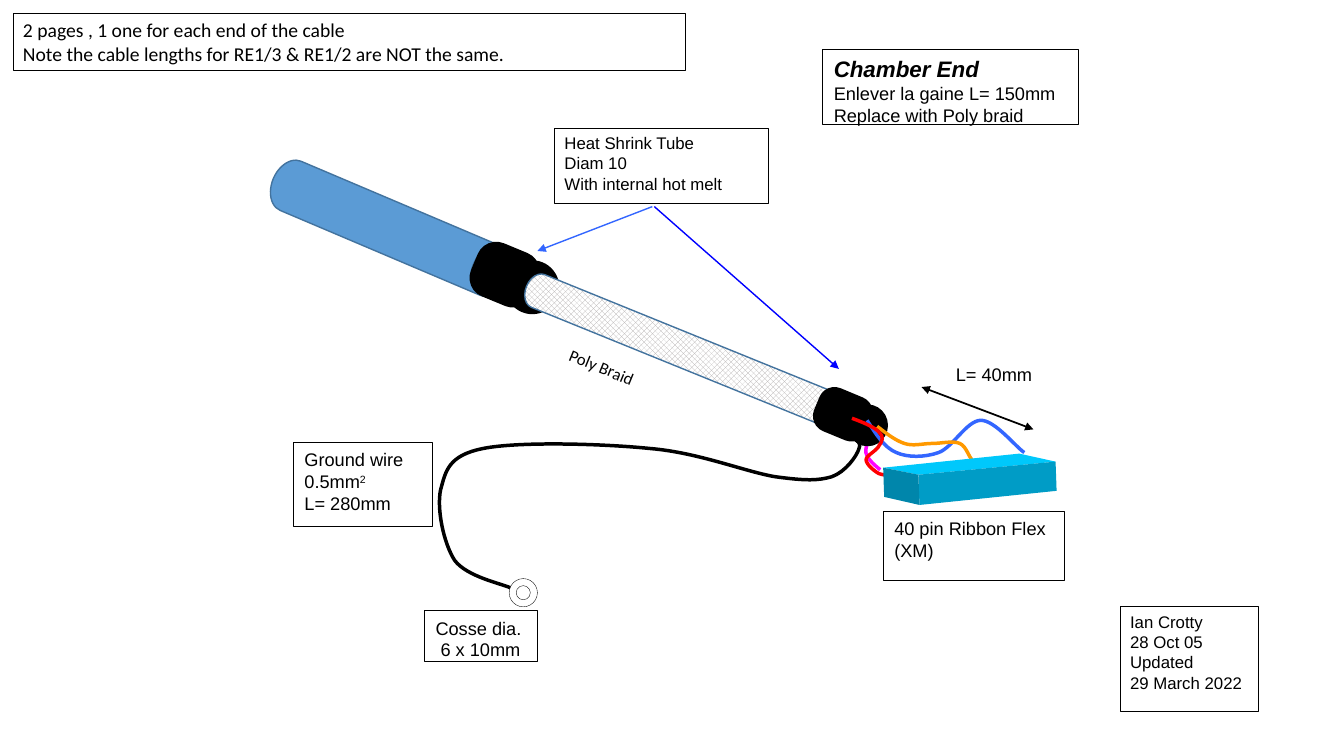
from dataclasses import dataclass

from lxml.etree import SubElement
from pptx import Presentation
from pptx.dml.color import RGBColor
from pptx.enum.dml import MSO_PATTERN_TYPE as Pattern
from pptx.enum.shapes import MSO_CONNECTOR as Connector, MSO_SHAPE as Preset
from pptx.enum.text import MSO_ANCHOR as Anchor, MSO_AUTO_SIZE as AutoSize, PP_ALIGN as Align
from pptx.oxml.ns import qn
from pptx.util import Inches, Pt

Point = tuple[float, float]
Area = tuple[float, float, float, float]


@dataclass(frozen=True)
class Theme:
    black: str = "000000"
    white: str = "FFFFFF"
    jacket: str = "5B9BD5"
    jacket_edge: str = "43739E"
    braid: str = "AFABAB"
    blue: str = "3366FF"
    deep_blue: str = "0000FF"
    magenta: str = "FF00FF"
    orange: str = "FF9900"
    red: str = "FF0000"
    plug_top: str = "00C8FB"
    plug_front: str = "009CC6"
    plug_side: str = "0086AB"
    title: float = 16
    note: float = 14
    label: float = 13
    small: float = 12
    sans: str = "Arial"
    body: str = "Calibri"


THEME = Theme()
TIGHT = (0.1, 0.05)


@dataclass(frozen=True)
class Span:
    text: str
    size: float = THEME.label
    font: str = THEME.sans
    strong: bool = False
    raised: bool = False


@dataclass(frozen=True)
class Label:
    area: Area
    paras: list[list[Span]]
    inset: Point = (0.11, 0.06)
    framed: bool = True
    filled: bool = False
    grows: bool = False
    turn: float = 0


@dataclass(frozen=True)
class Tube:
    preset: Preset
    area: Area
    fill: str
    turn: float = 0
    bend: float | None = None
    edge: str | None = None
    edge_width: float = 1
    braided: bool = False


@dataclass(frozen=True)
class Wire:
    color: str
    points: list[Point]


@dataclass(frozen=True)
class Arrow:
    start: Point
    end: Point
    color: str
    width: float = 1
    double: bool = False


@dataclass(frozen=True)
class Face:
    color: str
    corners: list[Point]


def rgb(color: str) -> RGBColor:
    return RGBColor.from_string(color)


def lines(size: float, font: str, *texts: str) -> list[list[Span]]:
    return [[Span(text, size, font)] for text in texts]


def set_fill(shape, color: str) -> None:
    shape.fill.solid()
    shape.fill.fore_color.rgb = rgb(color)


def set_line(shape, color: str, width: float) -> None:
    shape.line.color.rgb = rgb(color)
    shape.line.width = Pt(width)


def add_plain_shape(page, preset: Preset, area: Area):
    shape = page.shapes.add_shape(preset, *map(Inches, area))
    shape.shadow.inherit = False
    shape.fill.background()
    shape.line.fill.background()
    return shape


def draw_label(page, label: Label) -> None:
    if label.framed:
        box = add_plain_shape(page, Preset.RECTANGLE, label.area)
        set_line(box, THEME.black, 0.75)
    else:
        box = page.shapes.add_textbox(*map(Inches, label.area))
    if label.filled:
        set_fill(box, THEME.white)
    box.rotation = label.turn
    frame = box.text_frame
    frame.word_wrap = True
    frame.vertical_anchor = Anchor.TOP
    frame.auto_size = AutoSize.SHAPE_TO_FIT_TEXT if label.grows else AutoSize.NONE
    frame.margin_left = frame.margin_right = Inches(label.inset[0])
    frame.margin_top = frame.margin_bottom = Inches(label.inset[1])
    for index, spans in enumerate(label.paras):
        para = frame.add_paragraph() if index else frame.paragraphs[0]
        para.alignment = Align.LEFT
        for span in spans:
            run = para.add_run()
            run.text = span.text
            run.font.name = span.font
            run.font.size = Pt(span.size)
            run.font.bold = run.font.italic = span.strong
            run.font.color.rgb = rgb(THEME.black)
            if span.raised:
                run.font._element.set("baseline", "30000")


def draw_tube(page, tube: Tube) -> None:
    shape = add_plain_shape(page, tube.preset, tube.area)
    shape.rotation = tube.turn
    if tube.bend is not None:
        shape.adjustments[0] = tube.bend
    if tube.braided:
        shape.fill.patterned()
        shape.fill.pattern = Pattern.OUTLINED_DIAMOND
        shape.fill.fore_color.rgb = rgb(tube.fill)
        shape.fill.back_color.rgb = rgb(THEME.white)
    else:
        set_fill(shape, tube.fill)
    if tube.edge:
        set_line(shape, tube.edge, tube.edge_width)


def draw_outline(page, points: list[Point], close: bool):
    start, *rest = [(Inches(x), Inches(y)) for x, y in points]
    builder = page.shapes.build_freeform(*start)
    builder.add_line_segments(rest, close=close)
    shape = builder.convert_to_shape()
    shape.shadow.inherit = False
    return shape


def draw_wire(page, wire: Wire) -> None:
    shape = draw_outline(page, wire.points, False)
    route = shape._element.spPr.find(f".//{qn('a:path')}")
    for index, segment in enumerate(route.findall(qn("a:lnTo"))):
        if index % 3 == 0:
            bezier = SubElement(route, qn("a:cubicBezTo"))
        bezier.append(segment[0])
        route.remove(segment)
    shape.fill.background()
    set_line(shape, wire.color, 2.5)


def draw_face(page, face: Face) -> None:
    shape = draw_outline(page, face.corners, True)
    set_fill(shape, face.color)
    shape.line.fill.background()


def draw_arrow(page, arrow: Arrow) -> None:
    line = page.shapes.add_connector(Connector.STRAIGHT, *map(Inches, arrow.start + arrow.end))
    set_line(line, arrow.color, arrow.width)
    for end in ("headEnd", "tailEnd") if arrow.double else ("tailEnd",):
        SubElement(line.line._get_or_add_ln(), qn(f"a:{end}"), type="triangle")
    SubElement(line._element.spPr, qn("a:effectLst"))


def sleeve(body: Area, mouth: Area) -> list[Tube]:
    return [Tube(Preset.ROUNDED_RECTANGLE, body, THEME.black, 22.5, 0.35),
            Tube(Preset.OVAL, mouth, THEME.black, edge=THEME.black, edge_width=2.5)]


LUG = Tube(Preset.DONUT, (5.05, 5.74, 0.28, 0.28), THEME.white, 0, 0.25, THEME.black, 0.25)
JACKET = Tube(Preset.CAN, (3.61, 1, 0.53, 2.53), THEME.jacket, 113, 0.7, THEME.jacket_edge)
BRAID = Tube(Preset.CAN, (6.77, 1.68, 0.35, 3.72), THEME.braid, 112.1, 0.7, THEME.jacket_edge,
             braided=True)
CABLE = [LUG, JACKET, *sleeve((4.68, 2.44, 0.65, 0.57), (5.03, 2.6, 0.5, 0.5)), BRAID]
COLLAR = sleeve((8.08, 3.88, 0.56, 0.46), (8.42, 4.03, 0.37, 0.38))
INNER_WIRES = [
    Wire(THEME.magenta, [(8.32, 4.11), (8.43, 4.16), (8.55, 4.2), (8.6, 4.25), (8.64, 4.29),
                         (8.6, 4.34), (8.6, 4.39), (8.6, 4.43), (8.57, 4.48), (8.6, 4.52),
                         (8.62, 4.57), (8.68, 4.62), (8.73, 4.66)]),
    Wire(THEME.black, [(8.39, 4.31), (8.47, 4.34), (8.55, 4.38), (8.52, 4.45), (8.5, 4.52),
                       (8.39, 4.68), (8.25, 4.73), (8.11, 4.77), (7.99, 4.77), (7.69, 4.73),
                       (7.39, 4.68), (6.93, 4.49), (6.45, 4.45), (5.96, 4.4), (5.13, 4.38),
                       (4.79, 4.45), (4.44, 4.52), (4.42, 4.68), (4.37, 4.86), (4.33, 5.05),
                       (4.4, 5.39), (4.51, 5.56), (4.63, 5.72), (4.97, 5.79), (5.06, 5.83)]),
]
OUTER_WIRES = [
    Wire(THEME.blue, [(8.6, 4.17), (8.69, 4.31), (8.77, 4.44), (8.89, 4.49), (9, 4.54),
                      (9.17, 4.54), (9.31, 4.49), (9.45, 4.44), (9.59, 4.17), (9.73, 4.17),
                      (9.87, 4.17), (10.08, 4.44), (10.16, 4.49)]),
    Wire(THEME.orange, [(8.7, 4.23), (8.79, 4.3), (8.88, 4.37), (8.97, 4.4), (9.06, 4.43),
                        (9.15, 4.4), (9.25, 4.4), (9.34, 4.4), (9.45, 4.37), (9.52, 4.4),
                        (9.59, 4.43), (9.61, 4.55), (9.66, 4.58), (9.7, 4.6), (9.75, 4.59),
                        (9.8, 4.58)]),
    Wire(THEME.red, [(8.45, 4.15), (8.56, 4.19), (8.68, 4.24), (8.72, 4.29), (8.77, 4.33),
                     (8.75, 4.38), (8.72, 4.42), (8.7, 4.47), (8.59, 4.52), (8.59, 4.56),
                     (8.59, 4.61), (8.68, 4.68), (8.72, 4.7), (8.77, 4.72), (8.82, 4.71),
                     (8.86, 4.7)]),
]
BACK, EDGE, RIGHT, NEAR = (8.76, 4.64), (9.11, 4.71), (10.47, 4.58), (9.12, 5.01)
PLUG = [
    Face(THEME.plug_top, [BACK, (10.11, 4.5), RIGHT, EDGE]),
    Face(THEME.plug_front, [EDGE, RIGHT, (10.48, 4.87), NEAR]),
    Face(THEME.plug_side, [BACK, EDGE, NEAR, (8.77, 4.93)]),
]
ARROWS = [
    Arrow((6.47, 2.05), (5.33, 2.49), THEME.blue),
    Arrow((6.49, 2.05), (8.32, 3.66), THEME.deep_blue),
    Arrow((9.14, 3.84), (10.25, 4.26), THEME.black, 1.25, True),
]
LABELS = [
    Label((11.11, 6.02, 1.37, 1.04), lines(THEME.small, THEME.sans, "Ian Crotty", "28 Oct 05",
                                           "Updated", "29 March 2022"), TIGHT),
    Label((4.21, 6.06, 1.12, 0.5), lines(THEME.label, THEME.sans, "Cosse dia.", " 6 x 10mm")),
    Label((8.16, 0.49, 2.54, 0.75), [[Span("Chamber End", THEME.title, strong=True)],
                                     [Span("Enlever la gaine L= 150mm")],
                                     [Span("Replace with Poly braid")]], filled=True),
    Label((5.5, 1.27, 2.12, 0.75), lines(THEME.small, THEME.sans, "Heat Shrink Tube", "Diam 10",
                                         "With internal hot melt"), TIGHT),
    Label((2.91, 4.39, 1.38, 0.83), [[Span("Ground wire 0.5mm"), Span("2", raised=True)],
                                     [Span("L= 280mm")]]),
    Label((8.76, 5.07, 1.8, 0.69), [[Span("40 pin Ribbon Flex (XM)")]], filled=True),
    Label((9.37, 3.54, 1.19, 0.38), [[Span("L= 40mm")]], framed=False),
    Label((5.53, 3.51, 0.97, 0.3), lines(THEME.small, THEME.body, "Poly Braid"), TIGHT,
          framed=False, grows=True, turn=22.4),
    Label((0.13, 0.13, 6.67, 0.57), lines(
        THEME.note, THEME.body, "2 pages , 1 one for each end of the cable",
        "Note the cable lengths for RE1/3 & RE1/2 are NOT the same."), TIGHT, grows=True),
]
LAYERS = [(draw_tube, CABLE), (draw_wire, INNER_WIRES), (draw_tube, COLLAR),
          (draw_wire, OUTER_WIRES), (draw_face, PLUG), (draw_arrow, ARROWS), (draw_label, LABELS)]


def main() -> None:
    deck = Presentation()
    deck.slide_width, deck.slide_height = Inches(13.33), Inches(7.5)
    page = deck.slides.add_slide(deck.slide_layouts[6])
    for draw, items in LAYERS:
        for item in items:
            draw(page, item)
    deck.save("out.pptx")


if __name__ == "__main__":
    main()
